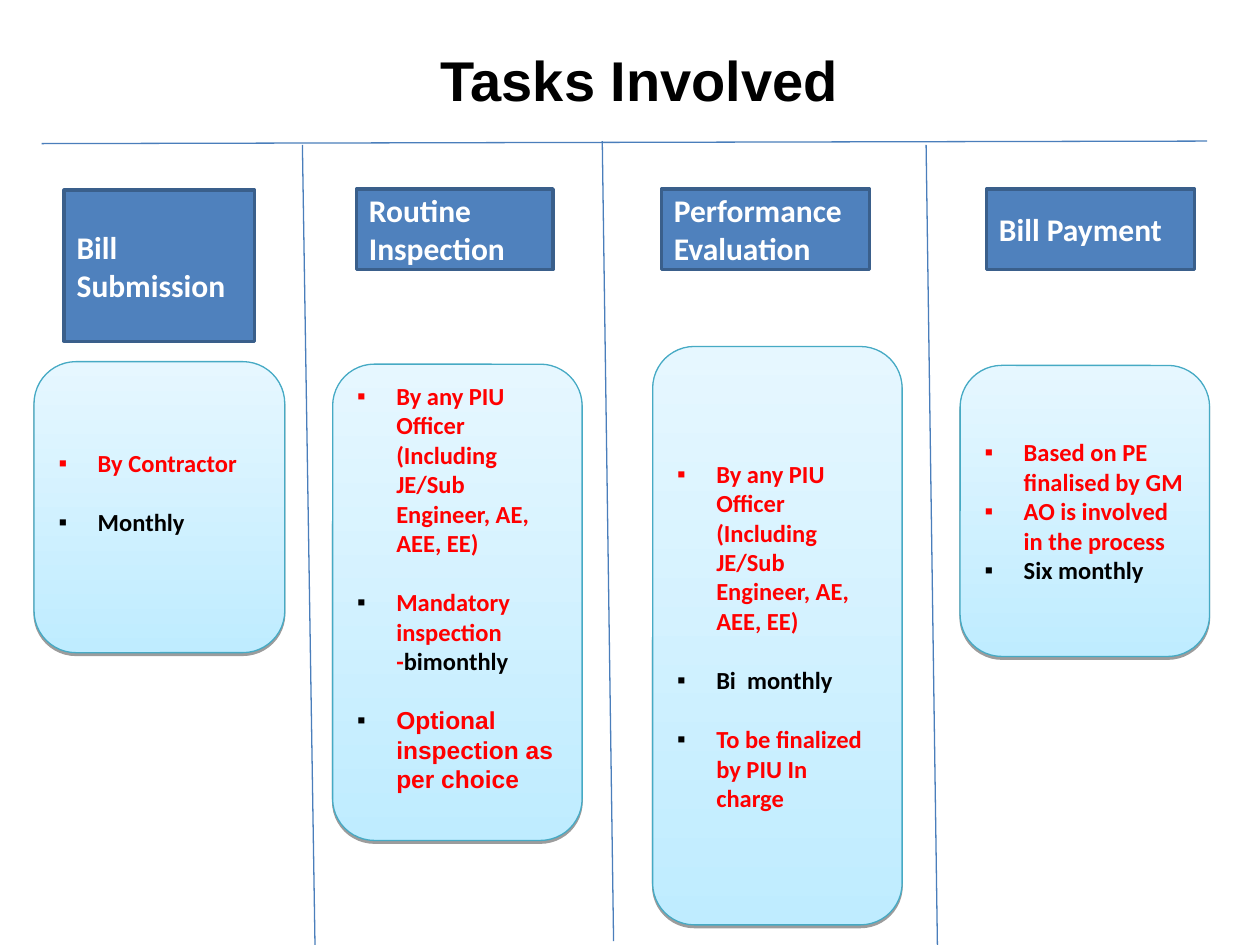
from lxml import etree
from pptx import Presentation, util as u
from pptx.dml.color import RGBColor
from pptx.enum import shapes, text
from pptx.oxml.ns import qn

HUES = {"black": "000000", "white": "FFFFFF", "red": "FF0000", "blue": "4F81BD",
        "navy": "3A5F8B", "rule": "4A7EBB", "teal": "46AAC4",
        "ice": "BFECFF", "mist": "E6F7FF"}
COLS, ROWS = 100, 75
LINE = 17
STAFF = ("red", 0, [("By any PIU Officer (Including JE/Sub Engineer, AE, AEE, EE)", "red")])
TASKS = [
    ("Bill Submission", (5.1, 15.1, 15.1, 12), (2.7, 28.7, 19.9, 23.1), 1, [
        ("red", 0, [("By Contractor", "red")]),
        ("black", 1, [("Monthly", "black")])]),
    ("Routine Inspection", (28.3, 15, 15.6, 6.4), (26.4, 28.9, 19.8, 37.8), 1, [
        STAFF,
        ("black", 1, [("Mandatory inspection -", "red"), ("bimonthly", "black")]),
        ("black", 1, [("Optional inspection as per choice", "red", "Arial")])]),
    ("Performance Evaluation", (52.5, 15, 16.5, 6.4), (51.8, 27.5, 19.8, 45.9), 0, [
        STAFF,
        ("black", 1, [("Bi  monthly", "black")]),
        ("black", 1, [("To be finalized by PIU In charge", "red")])]),
    ("Bill Payment", (78.3, 15, 16.5, 6.4), (76.2, 29, 19.8, 23.1), 0, [
        ("red", 0, [("Based on PE finalised by GM", "red")]),
        ("red", 0, [("AO is involved in the process", "red")]),
        ("black", 0, [("Six monthly", "black")])]),
]
RULES = [(24, 11.5, 25, 75), (47.8, 11.2, 48.7, 74.7),
         (73.5, 11.5, 74.4, 75), (95.8, 11.2, 3.3, 11.4)]

deck = Presentation()
deck.slide_width, deck.slide_height = u.Inches(10), u.Inches(7.5)
slide = deck.slides.add_slide(deck.slide_layouts[6])


def rgb(name):
    """Return the named colour."""
    return RGBColor.from_string(HUES[name])


def grid(box):
    """Turn alternating columns and rows into slide lengths."""
    units = deck.slide_width / COLS, deck.slide_height / ROWS
    return [round(n * units[i % 2]) for i, n in enumerate(box)]


def add(node, tag, **attrs):
    """Append a drawing element to a node."""
    return etree.SubElement(node, qn(tag), attrs)


def write(para, words, size=18, face="Calibri", hue="white", side="LEFT"):
    """Add one bold run to a paragraph."""
    para.alignment = getattr(text.PP_ALIGN, side)
    run = para.add_run()
    run.text = words
    font = run.font
    font.size, font.name, font.bold = u.Pt(size), face, True
    font.color.rgb = rgb(hue)


def frame(shape):
    """Set wrapping and middle anchor, and return the text frame."""
    body = shape.text_frame
    body.word_wrap = True
    body.vertical_anchor = text.MSO_ANCHOR.MIDDLE
    return body


def block(kind, box, edge, width):
    """Place an outlined shape without theme shadow."""
    shape = slide.shapes.add_shape(kind, *grid(box))
    shape.shadow.inherit = False
    shape.line.color.rgb = rgb(edge)
    shape.line.width = u.Pt(width)
    return shape


def title(box, words):
    """Place the slide title."""
    body = frame(slide.shapes.add_textbox(*grid(box)))
    write(body.paragraphs[0], words, size=32, face="Arial", hue="black", side="CENTER")


def head(box, words):
    """Place a task heading."""
    shape = block(shapes.MSO_SHAPE.RECTANGLE, box, "navy", 2)
    shape.fill.solid()
    shape.fill.fore_color.rgb = rgb("blue")
    write(frame(shape).paragraphs[0], words)


def bullet(para, hue):
    """Give a paragraph a square bullet and a hanging indent."""
    props = para._p.get_or_add_pPr()
    step = u.Inches(0.31)
    props.set("marL", str(step))
    props.set("indent", str(-step))
    add(add(props, "a:buClr"), "a:srgbClr", val=HUES[hue])
    add(props, "a:buFont", typeface="Arial")
    add(props, "a:buChar", char="▪")


def card(box, items, tail):
    """Place a shaded card of bullets with spare lines at its foot."""
    shape = block(shapes.MSO_SHAPE.ROUNDED_RECTANGLE, box, "teal", 0.75)
    shape.adjustments[0] = 0.167
    shape.fill.gradient()
    shape.fill.gradient_angle = 90
    for stop, hue in zip(shape.fill.gradient_stops, ("ice", "mist")):
        stop.color.rgb = rgb(hue)
    glow = shape._element.spPr.find(qn("a:effectLst"))
    drop = add(glow, "a:outerShdw", blurRad="0", dist=str(u.Pt(1.6)),
               dir="5400000", rotWithShape="0")
    add(add(drop, "a:srgbClr", val=HUES["black"]), "a:alpha", val="38000")
    body = frame(shape)
    body.margin_bottom = u.Inches(0.05) + u.Pt(LINE * tail)
    for i, (mark, gap, runs) in enumerate(items):
        para = body.add_paragraph() if i else body.paragraphs[0]
        para.space_before = u.Pt(LINE * gap)
        for words, hue, *face in runs:
            write(para, words, size=14, hue=hue, face=face[0] if face else "Calibri")
        bullet(para, mark)


def rule(ends):
    """Draw a thin dividing line."""
    line = slide.shapes.add_connector(shapes.MSO_CONNECTOR.STRAIGHT, *grid(ends))
    line.line.color.rgb = rgb("rule")
    line.line.width = u.Pt(0.75)
    add(line._element.spPr, "a:effectLst")


def main():
    """Build and save the slide."""
    title((5.8, 2.5, 89.9, 7.5), "Tasks Involved")
    for name, top, low, tail, items in TASKS:
        head(top, name)
        card(low, items, tail)
    for ends in RULES:
        rule(ends)
    deck.save("out.pptx")


if __name__ == "__main__":
    main()
